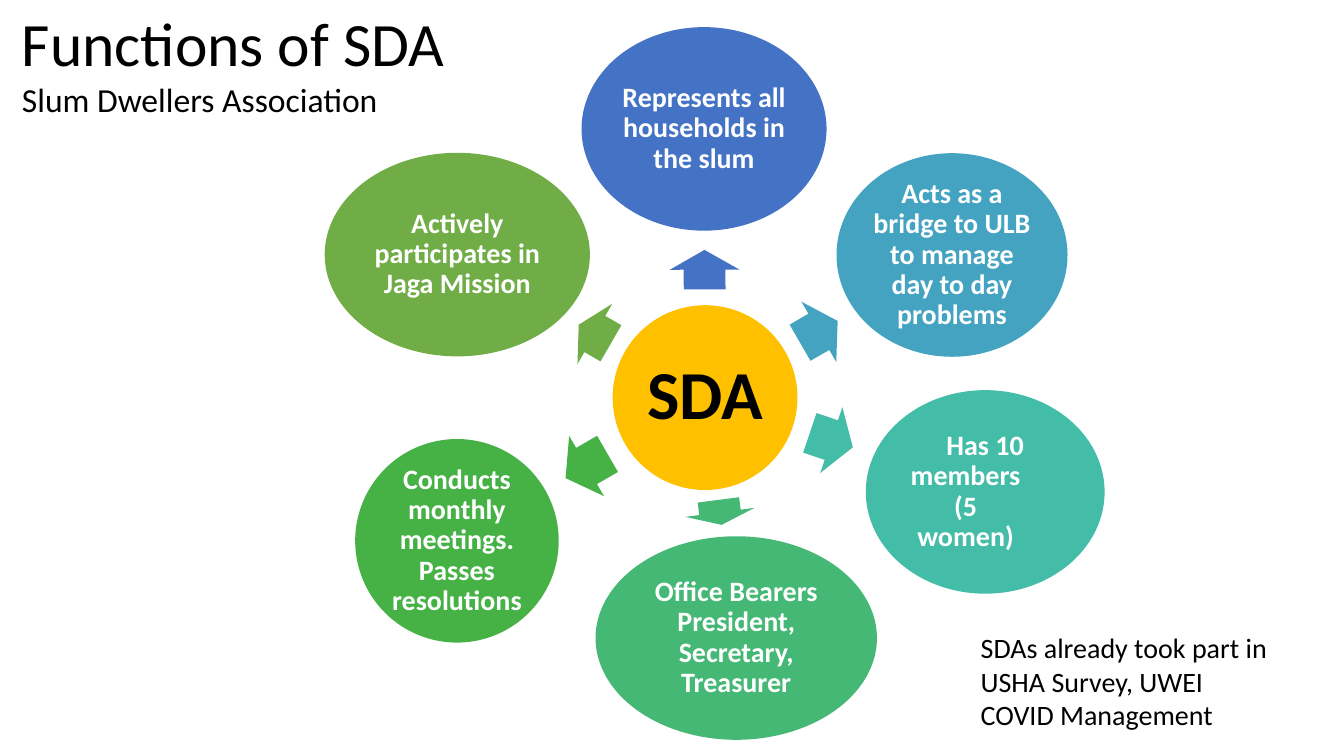
from math import cos, radians, sin

from pptx import Presentation
from pptx.dml.color import RGBColor
from pptx.enum.shapes import MSO_SHAPE
from pptx.enum.text import MSO_ANCHOR, PP_ALIGN
from pptx.util import Pt

COLORS = {
    "black": "000000", "white": "FFFFFF", "gold": "FFC000", "blue": "4472C4",
    "sky": "44A3C0", "teal": "43BDA7", "mint": "44B874", "green": "46B246",
    "olive": "70AD47",
}
FONT = "Calibri"
HUB_SIZE = 132
OVAL_HEIGHT = 145.4
ARROW_BREADTH = 49.7
MEMBERS = "Has 10 members\n(5 women)"

# text, color, angle, oval distance, oval width, arrow distance, arrow length
SPOKES = [
    ("Represents all households in the slum", "blue", 269.8, 191.9, 175, 91.4, 28.2),
    ("Acts as a bridge to ULB to manage day to day problems", "sky", 330, 203.7, 165, 93.9, 31),
    (MEMBERS, "teal", 18.6, 211.2, 170.6, 95.2, 32.4),
    ("Office Bearers President, Secretary, Treasurer", "mint", 82.6, 173.2, 201, 82.7, 18),
    ("Conducts monthly meetings. Passes resolutions", "green", 150, 204.6, 145.4, 97.7, 34.6),
    ("Actively participates in Jaga Mission", "olive", 210, 204.3, 189.4, 90.9, 26.6),
]


def format_paragraph(paragraph, size, color, bold=False):
    for run in paragraph.runs:
        run.font.name = FONT
        run.font.size = Pt(size)
        run.font.bold = bold
        run.font.color.rgb = RGBColor.from_string(COLORS[color])


def add_centered_shape(slide, kind, center, width, height, color):
    x, y = center
    shape = slide.shapes.add_shape(
        kind, Pt(x - width / 2), Pt(y - height / 2), Pt(width), Pt(height))
    shape.shadow.inherit = False
    shape.fill.solid()
    shape.fill.fore_color.rgb = RGBColor.from_string(COLORS[color])
    shape.line.fill.background()
    return shape


def add_oval(slide, center, width, height, fill, text, size, color, inset):
    oval = add_centered_shape(slide, MSO_SHAPE.OVAL, center, width, height, fill)
    frame = oval.text_frame
    frame.text = text
    frame.word_wrap = True
    frame.vertical_anchor = MSO_ANCHOR.MIDDLE
    frame.margin_left = frame.margin_right = Pt(inset)
    frame.margin_top = frame.margin_bottom = Pt(inset)
    for paragraph in frame.paragraphs:
        paragraph.alignment = PP_ALIGN.CENTER
        paragraph.line_spacing = 0.9
        format_paragraph(paragraph, size, color, bold=True)
    return oval


def polar_point(center, angle, distance):
    x, y = center
    return (x + distance * cos(radians(angle)), y + distance * sin(radians(angle)))


def add_radial_diagram(slide, center):
    add_oval(slide, center, HUB_SIZE, HUB_SIZE, "gold", "SDA", 49, "black", 5)
    for text, color, angle, oval_distance, width, arrow_distance, length in SPOKES:
        arrow = add_centered_shape(
            slide, MSO_SHAPE.RIGHT_ARROW, polar_point(center, angle, arrow_distance),
            length, ARROW_BREADTH, color)
        arrow.adjustments[0] = 0.6
        arrow.adjustments[1] = 0.5
        arrow.rotation = angle
        oval = add_oval(
            slide, polar_point(center, angle, oval_distance), width, OVAL_HEIGHT,
            color, text, 20, "white", 2)
        if text == MEMBERS:
            # Equal indents keep the first line centered and move the second left
            properties = oval.text_frame.paragraphs[0]._p.get_or_add_pPr()
            properties.set("marR", str(Pt(28)))
            properties.set("indent", str(Pt(28)))


def add_text_block(slide, left, top, width, height, lines, wrap):
    """Add a text box with one paragraph for each (text, size) in lines."""
    box = slide.shapes.add_textbox(Pt(left), Pt(top), Pt(width), Pt(height))
    frame = box.text_frame
    frame.word_wrap = wrap
    frame.text = "\n".join(text for text, _ in lines)
    for paragraph, (_, size) in zip(frame.paragraphs, lines):
        format_paragraph(paragraph, size, "black")


def main():
    presentation = Presentation()
    presentation.slide_width = Pt(960)
    presentation.slide_height = Pt(540)
    slide = presentation.slides.add_slide(presentation.slide_layouts[6])
    add_radial_diagram(slide, (503.6, 284))
    add_text_block(slide, 8.6, 0, 319.7, 90, [
        ("Functions of SDA", 44), ("Slum Dwellers Association", 24)], wrap=False)
    add_text_block(slide, 693.4, 447, 249.8, 80, [
        ("SDAs already took part in", 20), ("USHA Survey, UWEI", 20),
        ("COVID Management", 20)], wrap=True)
    presentation.save("out.pptx")


if __name__ == "__main__":
    main()
